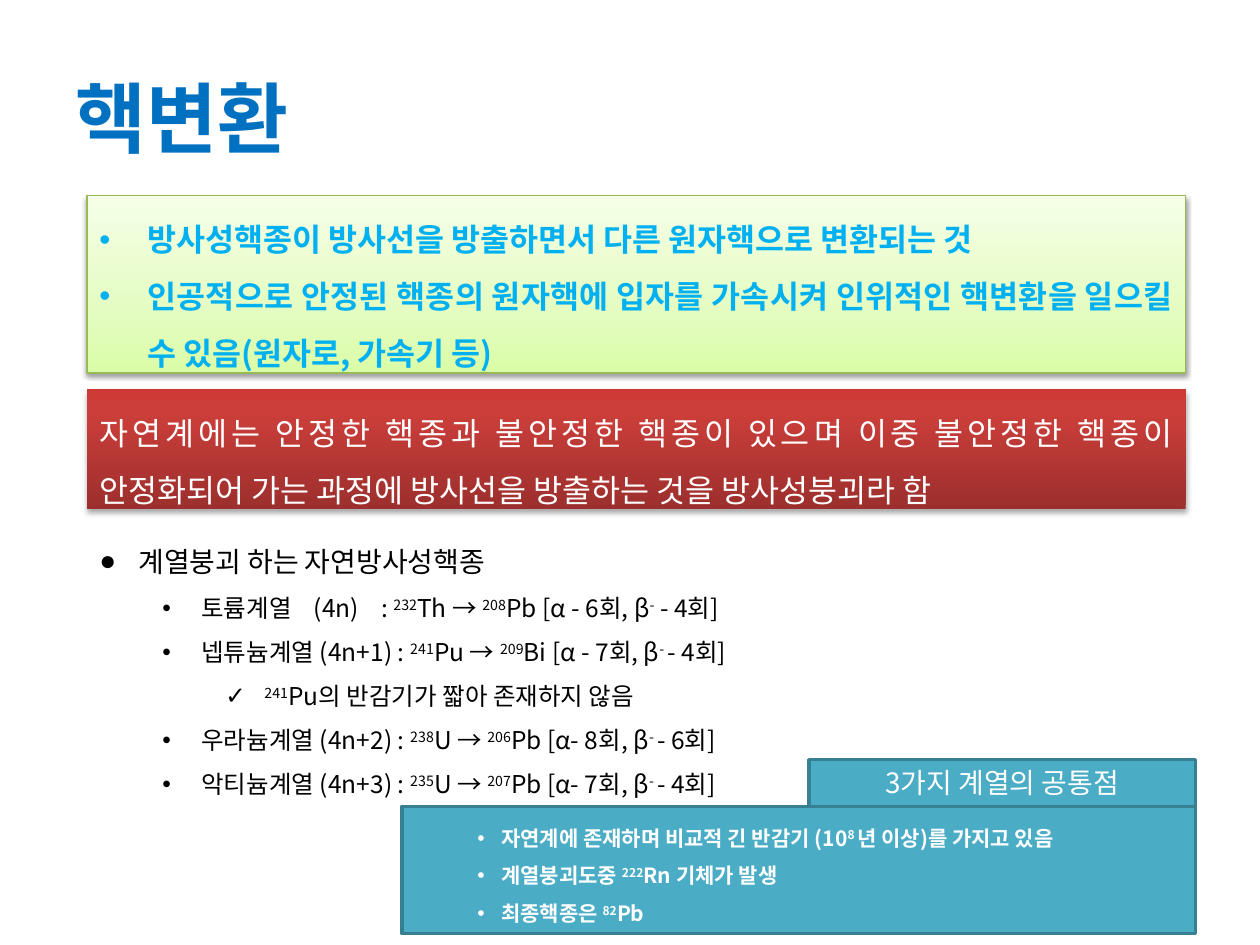
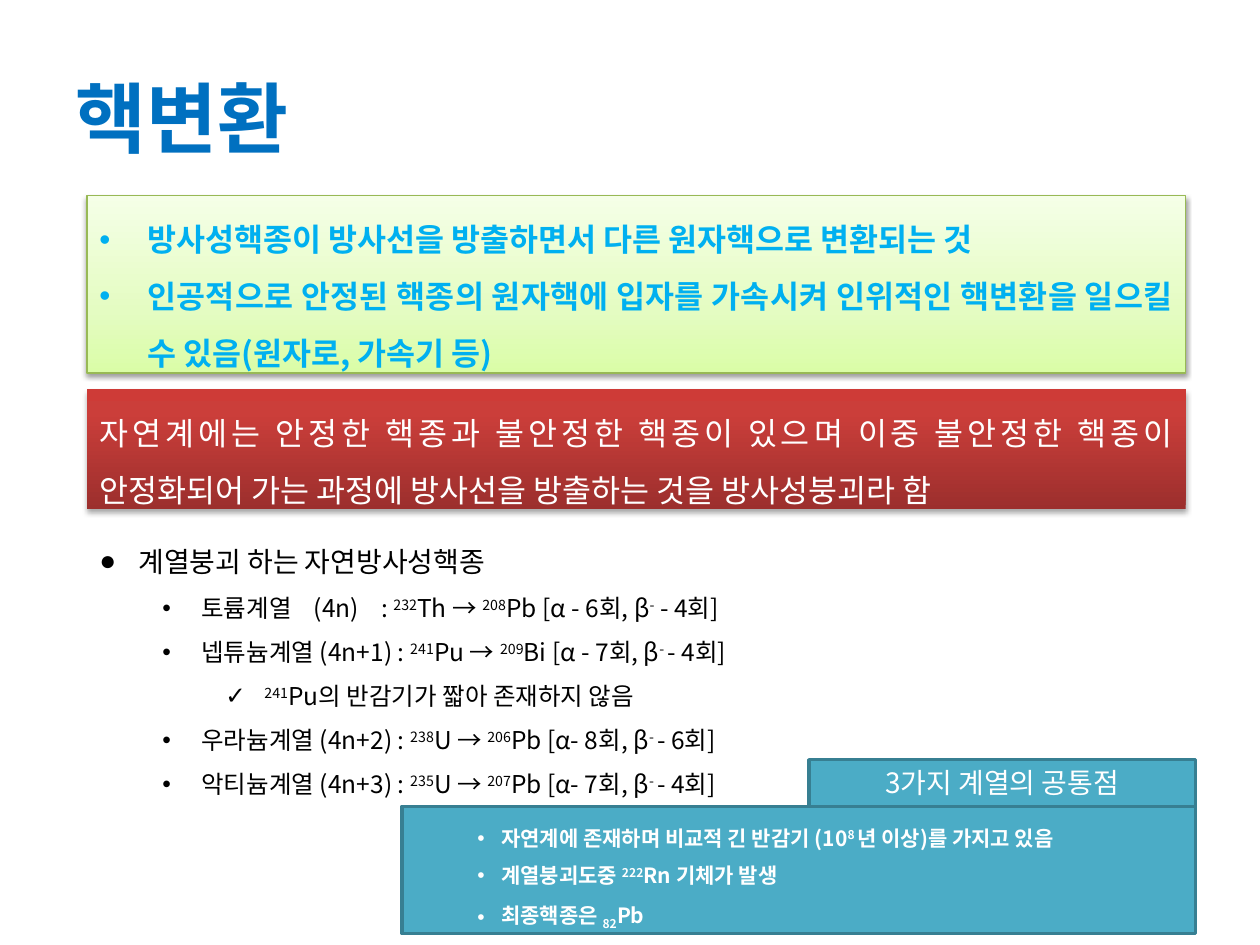
import dataclasses

import lxml.etree
import pptx
import pptx.dml.color
import pptx.enum.shapes
import pptx.enum.text
import pptx.oxml.ns
import pptx.util

Inches = pptx.util.Inches
Pt = pptx.util.Pt
qn = pptx.oxml.ns.qn
ALIGN = pptx.enum.text.PP_ALIGN


@dataclasses.dataclass(frozen=True)
class Theme:
    font: str = "Noto Sans CJK KR"
    title: str = "0070C0"
    definition: str = "00B0F0"
    text: str = "000000"
    light: str = "FFFFFF"
    green_stops: tuple = ((0, "DAFDA7"), (35, "E4FCC2"), (100, "F5FFE7"))
    green_line: str = "98B955"
    red_stops: tuple = ((0, "9C2F2D"), (80, "CB3E3A"), (100, "CE3B37"))
    teal: str = "4BACC6"
    teal_line: str = "377F92"
    title_size: int = 44
    lead_size: int = 18
    heading_size: int = 16
    series_size: int = 14
    note_size: int = 12
    line_spacing: float = 1.5


THEME = Theme()
TITLE_BOX = (0.5, 0.3, 9, 1.25)
DEFINITION_BOX = (0.69, 1.55, 8.72, 1.41)
DECAY_BOX = (0.69, 3.09, 8.72, 0.95)
SERIES_BOX = (0.69, 4.14, 5.65, 2.63)
COMMON_BOX = (3.19, 6.03, 6.3, 1.38)

SUPERSCRIPT, SUBSCRIPT = "30000", "-25000"
WIDE_GAP = "940"

DEFINITIONS = (
    "방사성핵종이 방사선을 방출하면서 다른 원자핵으로 변환되는 것",
    "인공적으로 안정된 핵종의 원자핵에 입자를 가속시켜 인위적인 핵변환을 일으킬 수 있음(원자로, 가속기 등)",
)
DECAY = (
    "자연계에는 안정한 핵종과 불안정한 핵종이 있으며 이중 불안정한 핵종이 "
    "안정화되어 가는 과정에 방사선을 방출하는 것을 방사성붕괴라 함"
)
SERIES = (
    (1, "토륨계열|~ |(4n)|~ |: |^232|Th → |^208|Pb [α - 6회, β|^-| - 4회]"),
    (1, "넵튜늄계열 (4n+1) : |^241|Pu → |^209|Bi [α - 7회, β|^- |- 4회]"),
    (2, "^241|Pu의 반감기가 짧아 존재하지 않음"),
    (1, "우라늄계열 (4n+2) : |^238|U → |^206|Pb [α- 8회, β|^- |- 6회]"),
    (1, "악티늄계열 (4n+3) : |^235|U → |^207|Pb [α- 7회, β|^- |- 4회]"),
)
COMMON_POINTS = (
    "자연계에 존재하며 비교적 긴 반감기 (10|^8 |년 이상)를 가지고 있음",
    "계열붕괴도중 |^222|Rn 기체가 발생",
)
FINAL_NUCLIDES = ("최종핵종은 |^82|Pb", "최종핵종은 |_82|Pb")


def color(value):
    return pptx.dml.color.RGBColor.from_string(value)


def place(box):
    return [Inches(length) for length in box]


def add_child(parent, tag, **attributes):
    return lxml.etree.SubElement(parent, qn(tag), attributes)


def add_runs(paragraph, text):
    marks = {
        "^": ("baseline", SUPERSCRIPT),
        "_": ("baseline", SUBSCRIPT),
        "~": ("spc", WIDE_GAP),
    }
    for piece in text.split("|"):
        run = paragraph.add_run()
        mark = marks.get(piece[0])
        run.text = piece[1:] if mark else piece
        if mark:
            run._r.get_or_add_rPr().set(*mark)


def write(paragraph, text, size, ink, bold=False, align=ALIGN.LEFT,
          spacing=THEME.line_spacing, level=0, bullet=None, margin=0, hanging=0):
    paragraph.alignment = align
    paragraph.line_spacing = spacing
    paragraph.level = level
    if bullet:
        properties = paragraph._p.get_or_add_pPr()
        properties.set("marL", str(Inches(margin)))
        properties.set("indent", str(-Inches(hanging)))
        add_child(properties, "a:buFont", typeface="Arial")
        add_child(properties, "a:buChar", char=bullet)
    font = paragraph.font
    font.size = Pt(size)
    font.bold = bold
    font.color.rgb = color(ink)
    font.name = THEME.font
    add_child(paragraph._p.pPr.find(qn("a:defRPr")), "a:ea", typeface=THEME.font)
    add_runs(paragraph, text)


def open_frame(shape):
    frame = shape.text_frame
    frame.word_wrap = True
    frame.auto_size = pptx.enum.text.MSO_AUTO_SIZE.NONE
    frame.vertical_anchor = pptx.enum.text.MSO_ANCHOR.TOP
    return frame


def paragraphs(frame, count):
    return [frame.paragraphs[0]] + [frame.add_paragraph() for _ in range(count - 1)]


def add_panel(slide, box, line=None, width=0):
    panel = slide.shapes.add_shape(pptx.enum.shapes.MSO_SHAPE.RECTANGLE, *place(box))
    panel.shadow.inherit = False
    if line:
        panel.line.color.rgb = color(line)
        panel.line.width = Pt(width)
    else:
        panel.line.fill.background()
    return panel


def fill_gradient(panel, stops):
    panel.fill.gradient()
    panel.fill.gradient_angle = 90
    stop_list = panel._element.spPr.find(qn("a:gradFill")).find(qn("a:gsLst"))
    for stop in list(stop_list):
        stop_list.remove(stop)
    for position, value in stops:
        stop = add_child(stop_list, "a:gs", pos=str(position * 1000))
        add_child(stop, "a:srgbClr", val=value)


def cast_shadow(panel, opacity, distance):
    effects = panel._element.spPr.find(qn("a:effectLst"))
    shadow = add_child(effects, "a:outerShdw", blurRad=str(Pt(3.1)),
                       dist=str(Pt(distance)), dir="5400000", rotWithShape="0")
    shade = add_child(shadow, "a:srgbClr", val="000000")
    add_child(shade, "a:alpha", val=str(opacity * 1000))


def set_title(slide, box):
    title = slide.shapes.title
    title.left, title.top, title.width, title.height = place(box)
    frame = open_frame(title)
    frame.vertical_anchor = pptx.enum.text.MSO_ANCHOR.MIDDLE
    write(frame.paragraphs[0], "핵변환", THEME.title_size, THEME.title, bold=True, spacing=1.0)


def add_definitions(slide, box):
    panel = add_panel(slide, box, THEME.green_line, 0.75)
    fill_gradient(panel, THEME.green_stops)
    cast_shadow(panel, 38, 1.6)
    lines = paragraphs(open_frame(panel), len(DEFINITIONS))
    for paragraph, text in zip(lines, DEFINITIONS):
        write(paragraph, text, THEME.lead_size, THEME.definition, bold=True,
              align=ALIGN.JUSTIFY, bullet="•", margin=0.38, hanging=0.38)


def add_decay(slide, box):
    panel = add_panel(slide, box)
    fill_gradient(panel, THEME.red_stops)
    cast_shadow(panel, 35, 1.8)
    write(open_frame(panel).paragraphs[0], DECAY, THEME.lead_size, THEME.light,
          align=ALIGN.JUSTIFY)


def add_series(slide, box):
    frame = open_frame(slide.shapes.add_textbox(*place(box)))
    heading, *rows = paragraphs(frame, len(SERIES) + 1)
    write(heading, "계열붕괴 하는 자연방사성핵종", THEME.heading_size, THEME.text,
          bullet="●", margin=0.31, hanging=0.31)
    for paragraph, (level, text) in zip(rows, SERIES):
        write(paragraph, text, THEME.series_size, THEME.text, level=level,
              bullet="•✓"[level - 1], margin=0.31 + 0.5 * level, hanging=0.31)


def add_common_points(slide, box, final_nuclide):
    left, top, width, height = box
    tab_width, tab_height = 3.07, 0.37
    body_box = (left, top + tab_height, width, height - tab_height)
    tab_box = (left + width - tab_width, top, tab_width, tab_height)
    body, tab = [add_panel(slide, part, THEME.teal_line, 2) for part in (body_box, tab_box)]
    for panel in (body, tab):
        panel.fill.solid()
        panel.fill.fore_color.rgb = color(THEME.teal)
    points = (*COMMON_POINTS, final_nuclide)
    for paragraph, text in zip(paragraphs(open_frame(body), len(points)), points):
        write(paragraph, text, THEME.note_size, THEME.light, bold=True, level=1,
              bullet="•", margin=0.69, hanging=0.19)
    write(open_frame(tab).paragraphs[0], "3가지 계열의 공통점", THEME.heading_size,
          THEME.light, align=ALIGN.CENTER, spacing=1.0)


def add_transmutation_slide(presentation, final_nuclide):
    slide = presentation.slides.add_slide(presentation.slide_layouts.get_by_name("Title Only"))
    set_title(slide, TITLE_BOX)
    add_definitions(slide, DEFINITION_BOX)
    add_decay(slide, DECAY_BOX)
    add_series(slide, SERIES_BOX)
    add_common_points(slide, COMMON_BOX, final_nuclide)


def main():
    presentation = pptx.Presentation()
    presentation.slide_width = Inches(10)
    presentation.slide_height = Inches(7.5)
    for final_nuclide in FINAL_NUCLIDES:
        add_transmutation_slide(presentation, final_nuclide)
    presentation.save("out.pptx")


if __name__ == "__main__":
    main()
